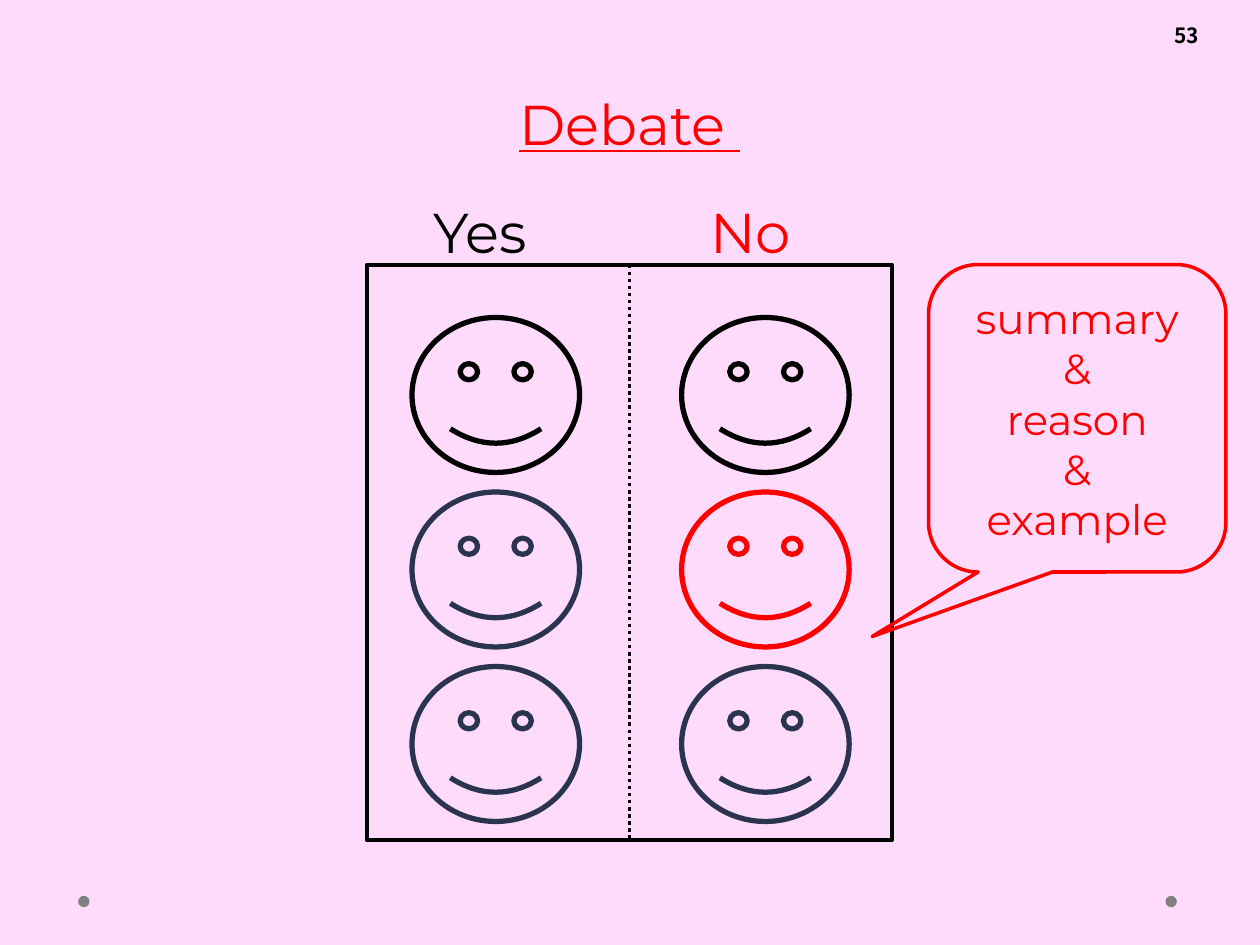
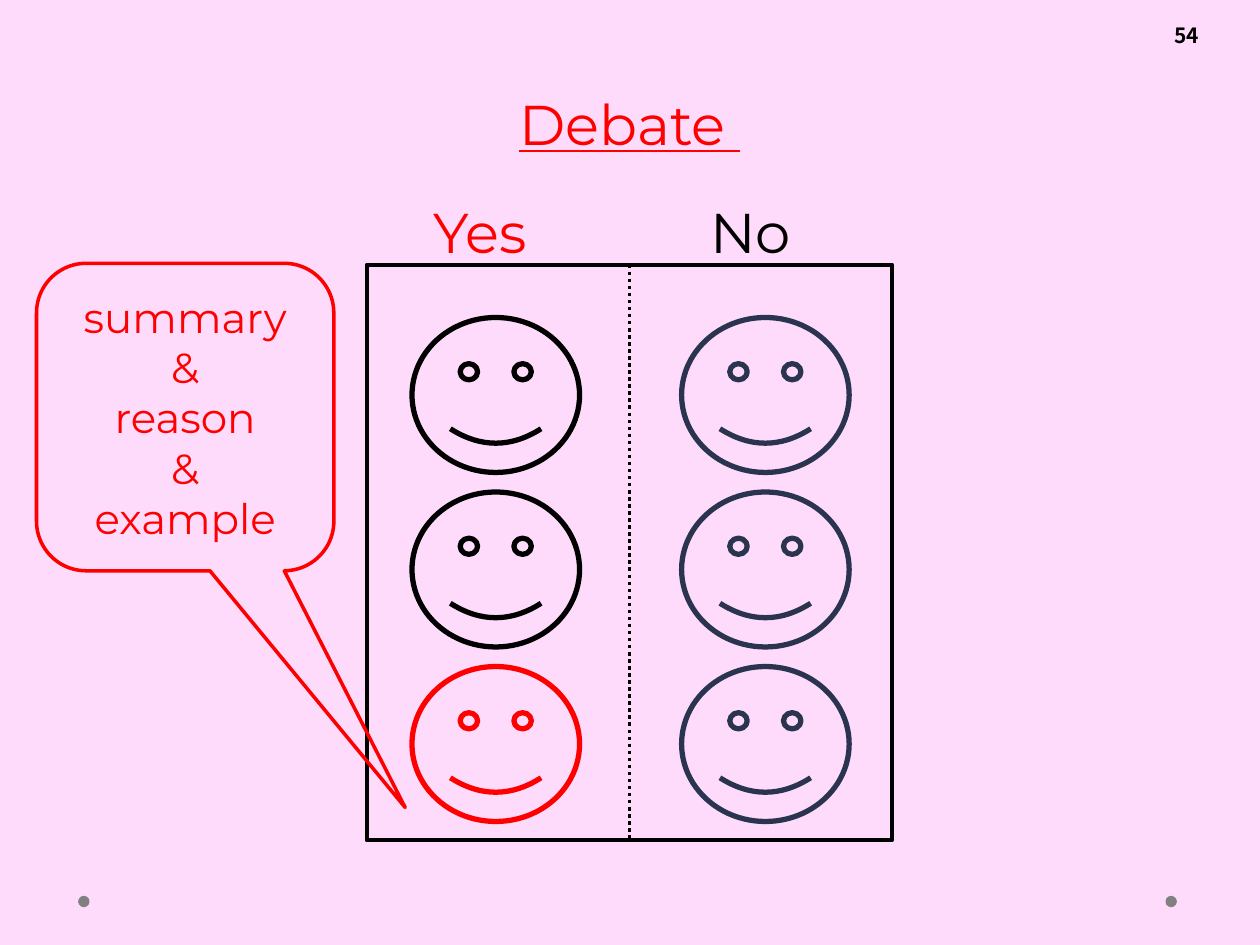
from dataclasses import dataclass

from lxml import etree
from pptx import Presentation
from pptx.dml.color import RGBColor
from pptx.enum.dml import MSO_LINE
from pptx.enum.shapes import MSO_CONNECTOR, MSO_SHAPE
from pptx.enum.text import MSO_ANCHOR, PP_ALIGN
from pptx.oxml.ns import qn
from pptx.util import Inches, Pt

RECTANGLE, OVAL = MSO_SHAPE.RECTANGLE, MSO_SHAPE.OVAL
SMILEY, CALLOUT = MSO_SHAPE.SMILEY_FACE, MSO_SHAPE.ROUNDED_RECTANGULAR_CALLOUT
STRAIGHT, SYS_DOT = MSO_CONNECTOR.STRAIGHT, MSO_LINE.ROUND_DOT
LEFT, CENTER = PP_ALIGN.LEFT, PP_ALIGN.CENTER
TOP, MIDDLE = MSO_ANCHOR.TOP, MSO_ANCHOR.MIDDLE
TOP_SIDE, BOTTOM_SIDE = 0, 2

WIDTH, HEIGHT = Inches(10), Inches(7.5)
COLUMNS, ROWS = 100, 75
COLORS = {
    "background": "FEDAFB",
    "active": "FF0000",
    "spoken": "000000",
    "waiting": "2A344F",
    "dot": "808080",
}
BODY_FONT, NUMBER_FONT = "Montserrat", "Noto Sans CJK JP"
SPEECH = "summary\n&\nreason\n&\nexample"


@dataclass
class Box:
    """A region measured in grid columns and rows."""
    x: float
    y: float
    w: float
    h: float

    def inner(self, x, y, w, h):
        """Return a box placed relative to this one."""
        return Box(self.x + x, self.y + y, w, h)

    def emu(self):
        """Return left, top, width and height in slide lengths."""
        col, row = WIDTH / COLUMNS, HEIGHT / ROWS
        return [round(n) for n in (self.x * col, self.y * row, self.w * col, self.h * row)]


PAGE = Box(0, 0, COLUMNS, ROWS)
BOARD = PAGE.inner(29.1, 21, 41.7, 45.7)

DEBATES = [
    {
        "number": "53",
        "sides": [("Yes", "spoken", ["spoken", "waiting", "waiting"]),
                  ("No", "active", ["spoken", "active", "waiting"])],
        "speech": PAGE.inner(73.7, 21, 23.6, 24.4),
        "tail": (-0.69, 0.71),
    },
    {
        "number": "54",
        "sides": [("Yes", "active", ["spoken", "spoken", "active"]),
                  ("No", "spoken", ["waiting", "waiting", "waiting"])],
        "speech": PAGE.inner(2.9, 20.9, 23.6, 24.4),
        "tail": (0.74, 1.27),
    },
]


def rgb(color):
    """Look up a named colour."""
    return RGBColor.from_string(COLORS[color])


def add_figure(slide, preset, box, line=None, weight=0, fill=None):
    """Add a flat preset shape with an optional outline and fill."""
    figure = slide.shapes.add_shape(preset, *box.emu())
    figure.shadow.inherit = False
    if fill:
        figure.fill.solid()
        figure.fill.fore_color.rgb = rgb(fill)
    else:
        figure.fill.background()
    if line:
        figure.line.color.rgb = rgb(line)
        figure.line.width = Pt(weight)
    else:
        figure.line.fill.background()
    return figure


def write(holder, words, size, color, align=CENTER, anchor=TOP, font=BODY_FONT,
          bold=False, underline=False):
    """Put words into a shape and format every run."""
    frame = holder.text_frame
    frame.word_wrap = True
    frame.vertical_anchor = anchor
    frame.text = words
    for paragraph in frame.paragraphs:
        paragraph.alignment = align
        for run in paragraph.runs:
            run.font.size = Pt(size)
            run.font.name = font
            run.font.bold = bold
            run.font.underline = underline
            run.font.color.rgb = rgb(color)


def add_page_frame(slide, page, number):
    """Set the background, corner dots, slide number and title."""
    slide.background.fill.solid()
    slide.background.fill.fore_color.rgb = rgb("background")
    for x in (92.5, 6.2):
        add_figure(slide, OVAL, page.inner(x, 71.1, 0.9, 0.9), fill="dot")
    number_box = slide.shapes.add_textbox(*page.inner(92.2, 1.3, 5.5, 3).emu())
    write(number_box, number, 12, "spoken", align=LEFT, font=NUMBER_FONT, bold=True)
    title = slide.shapes.add_textbox(*page.inner(5.5, 6.6, 89, 6.4).emu())
    write(title, "Debate ", 32, "active", underline=True)


def add_board(slide, board, sides):
    """Draw the two teams of speakers, their divider and their headings."""
    outline = add_figure(slide, RECTANGLE, board, "spoken", 2.25)
    for column, (_, _, speakers) in enumerate(sides):
        for row, state in enumerate(speakers):
            seat = board.inner(3.6 + 21.4 * column, 4.2 + 13.85 * row, 13.3, 12.3)
            add_figure(slide, SMILEY, seat, state, 3)
    divider = slide.shapes.add_connector(STRAIGHT, 0, 0, 0, 0)
    divider.begin_connect(outline, TOP_SIDE)
    divider.end_connect(outline, BOTTOM_SIDE)
    divider.line.color.rgb = rgb("spoken")
    divider.line.width = Pt(2)
    divider.line.dash_style = SYS_DOT
    etree.SubElement(divider.element.spPr, qn("a:effectLst"))
    for column, (side, color, _) in enumerate(sides):
        heading_box = board.inner(2.4 + 21.5 * column, -5.8, 15.7, 6.4)
        heading = slide.shapes.add_textbox(*heading_box.emu())
        heading.text_frame.margin_right = round(WIDTH / COLUMNS * 3.5)
        write(heading, side, 32, color)


def add_speech(slide, box, tail):
    """Draw the speech bubble whose tail points at the active speaker."""
    speech = add_figure(slide, CALLOUT, box, "active", 2)
    speech.adjustments[0], speech.adjustments[1] = tail
    write(speech, SPEECH, 24, "active", anchor=MIDDLE)


def add_debate_slide(deck, debate):
    """Build one step of the debate."""
    slide = deck.slides.add_slide(deck.slide_layouts[6])
    add_page_frame(slide, PAGE, debate["number"])
    add_board(slide, BOARD, debate["sides"])
    add_speech(slide, debate["speech"], debate["tail"])


def main():
    """Build and save the presentation."""
    deck = Presentation()
    deck.slide_width, deck.slide_height = WIDTH, HEIGHT
    for debate in DEBATES:
        add_debate_slide(deck, debate)
    deck.save("out.pptx")


if __name__ == "__main__":
    main()
